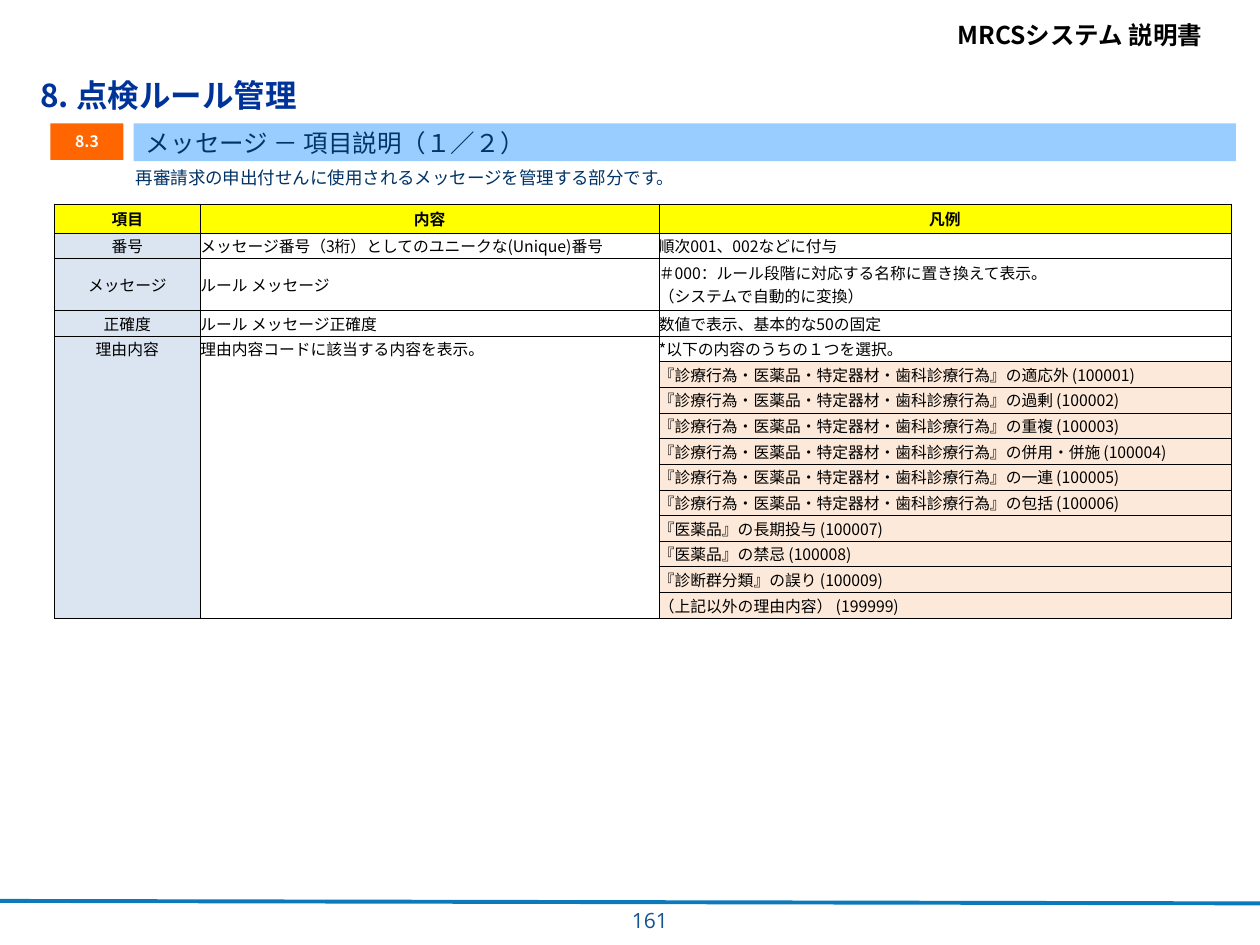
from copy import deepcopy

from lxml import etree
from pptx import Presentation
from pptx import util as u
from pptx.dml.color import RGBColor
from pptx.enum import shapes, text
from pptx.oxml.ns import qn

COLORS = {
    "black": "000000", "white": "FFFFFF", "rule": "0C79BC", "page": "125496",
    "title": "003399", "navy": "003366", "orange": "FF6600", "band": "99CCFF",
    "header": "FFFF00", "item": "DBE5F1", "reason": "FDE9D9",
}
JAPANESE = "Noto Sans CJK JP"
LEFT, CENTER, RIGHT = text.PP_ALIGN.LEFT, text.PP_ALIGN.CENTER, text.PP_ALIGN.RIGHT
TOP, MIDDLE = text.MSO_ANCHOR.TOP, text.MSO_ANCHOR.MIDDLE

PROCEDURES = "『診療行為・医薬品・特定器材・歯科診療行為』の"
REASONS = [PROCEDURES + name for name in
           ("適応外", "過剰", "重複", "併用・併施", "一連", "包括")]
REASONS += ["『医薬品』の長期投与", "『医薬品』の禁忌", "『診断群分類』の誤り"]
REASON_ROWS = [f"{reason} ({code})" for code, reason in enumerate(REASONS, 100001)]
REASON_ROWS.append("（上記以外の理由内容） (199999)")
ROWS = [
    ("項目", "内容", "凡例"),
    ("番号", "メッセージ番号（3桁）としてのユニークな(Unique)番号", "順次001、002などに付与"),
    ("メッセージ", "ルール メッセージ",
     "＃000：ルール段階に対応する名称に置き換えて表示。\n（システムで自動的に変換）"),
    ("正確度", "ルール メッセージ正確度", "数値で表示、基本的な50の固定"),
    ("理由内容", "理由内容コードに該当する内容を表示。", "*以下の内容のうちの１つを選択。"),
] + [("", "", reason) for reason in REASON_ROWS]
GROUP_START = 4  # first row of the reason group


def rgb(name):
    return RGBColor.from_string(COLORS[name])


def write(frame, words, size, color="black", bold=False, font=JAPANESE,
          align=None, spacing=None):
    paragraph = frame.paragraphs[0]
    paragraph.text = words
    paragraph.alignment = align
    paragraph.line_spacing = spacing
    for run in paragraph.runs:
        run.font.size = u.Pt(size)
        run.font.bold = bold
        run.font.name = font
        run.font.color.rgb = rgb(color)
        etree.SubElement(run._r.rPr, qn("a:ea"), typeface=font)
    # Line breaks take the format of the text around them
    for line_break in paragraph._p.findall(qn("a:br")):
        line_break.append(deepcopy(paragraph.runs[0]._r.rPr))
    if not words:
        etree.SubElement(paragraph._p, qn("a:endParaRPr"), sz=str(size * 100))


def add_text(slide, box, words, size, wrap=True, margin=0.05, **style):
    shape = slide.shapes.add_textbox(*map(u.Inches, box))
    frame = shape.text_frame
    frame.word_wrap = wrap
    if not wrap:
        frame.auto_size = text.MSO_AUTO_SIZE.SHAPE_TO_FIT_TEXT
    frame.margin_top = frame.margin_bottom = u.Inches(margin)
    write(frame, words, size, **style)


def add_panel(slide, box, fill, words, size, anchor=MIDDLE, **style):
    shape = slide.shapes.add_shape(shapes.MSO_SHAPE.RECTANGLE, *map(u.Inches, box))
    shape.shadow.inherit = False
    shape.fill.solid()
    shape.fill.fore_color.rgb = rgb(fill)
    shape.line.fill.background()
    shape.text_frame.word_wrap = True
    shape.text_frame.vertical_anchor = anchor
    write(shape.text_frame, words, size, **style)


def add_frame(slide, width, height):
    """Footer rule, page number and document name."""
    rule = slide.shapes.add_connector(
        shapes.MSO_CONNECTOR.STRAIGHT, 0, u.Inches(height - 0.35),
        u.Inches(width), u.Inches(height - 0.33))
    rule.line.color.rgb = rgb("rule")
    rule.line.width = u.Pt(2.25)
    etree.SubElement(rule._element.spPr, qn("a:effectLst"))
    add_text(slide, (width - 2.5, 0.11, 2.25, 0.34), "MRCSシステム 説明書", 14,
             wrap=False, bold=True)
    add_text(slide, (4.87, height - 0.35, 0.53, 0.28), "161", 12,
             color="page", font="Open Sans", align=RIGHT)


def add_heading(slide, left, top):
    """Chapter title, section number, section band and summary."""
    add_text(slide, (left, top, 9.74, 0.42), "8. 点検ルール管理", 18, margin=0,
             color="title", bold=True)
    add_panel(slide, (left + 0.76, top + 0.68, 8.63, 0.27), "white",
              "再審請求の申出付せんに使用されるメッセージを管理する部分です。", 10,
              anchor=TOP, color="navy", align=LEFT)
    add_panel(slide, (left + 0.18, top + 0.38, 0.58, 0.29), "orange", "8.3", 9,
              color="white", bold=True, align=CENTER, spacing=0.95)
    add_panel(slide, (left + 0.84, top + 0.38, 8.75, 0.3), "band",
              "メッセージ － 項目説明（１／２）", 14, color="navy", align=LEFT)


def set_borders(cell, visible):
    properties = cell._tc.get_or_add_tcPr()
    borders = []
    for side in "LRTB":
        line = etree.Element(qn("a:ln" + side), w=str(u.Pt(0.5)))
        if side in visible:
            fill = etree.SubElement(line, qn("a:solidFill"))
            etree.SubElement(fill, qn("a:srgbClr"), val=COLORS["black"])
        else:
            etree.SubElement(line, qn("a:noFill"))
        borders.append(line)
    properties[0:0] = borders  # borders come before the fill


def cell_fill(row, column):
    if row == 0:
        return "header"
    if column == 0:
        return "item"
    return "reason" if column == 2 and row > GROUP_START else "white"


def add_item_table(slide, left, top, height):
    widths = (1.16, 3.64, 4.54)
    fixed = {0: 0.23, 2: 0.41}
    row_height = (height - sum(fixed.values())) / (len(ROWS) - len(fixed))
    table = slide.shapes.add_table(
        len(ROWS), len(widths), u.Inches(left), u.Inches(top),
        u.Inches(sum(widths)), u.Inches(height)).table
    for column, width in zip(table.columns, widths):
        column.width = u.Inches(width)
    for r, words in enumerate(ROWS):
        table.rows[r].height = u.Inches(fixed.get(r, row_height))
        for c, word in enumerate(words):
            cell = table.cell(r, c)
            cell.margin_left = cell.margin_right = 0
            cell.margin_top = cell.margin_bottom = 0
            cell.vertical_anchor = MIDDLE
            cell.fill.solid()
            cell.fill.fore_color.rgb = rgb(cell_fill(r, c))
            write(cell.text_frame, word, 9, bold=r == 0,
                  align=CENTER if r == 0 or c == 0 else None)
            # The first two columns of the reason group look like one tall cell
            visible = "LR"
            if c == 2 or r <= GROUP_START:
                visible += "T"
            if c == 2 or r < GROUP_START or r == len(ROWS) - 1:
                visible += "B"
            set_borders(cell, visible)


def main():
    presentation = Presentation()
    presentation.slide_width = u.Inches(10)
    presentation.slide_height = u.Inches(7.5)
    slide = presentation.slides.add_slide(presentation.slide_layouts[6])
    add_frame(slide, 10, 7.5)
    add_heading(slide, 0.22, 0.6)
    add_item_table(slide, 0.43, 1.62, 3.29)
    presentation.save("out.pptx")


if __name__ == "__main__":
    main()
